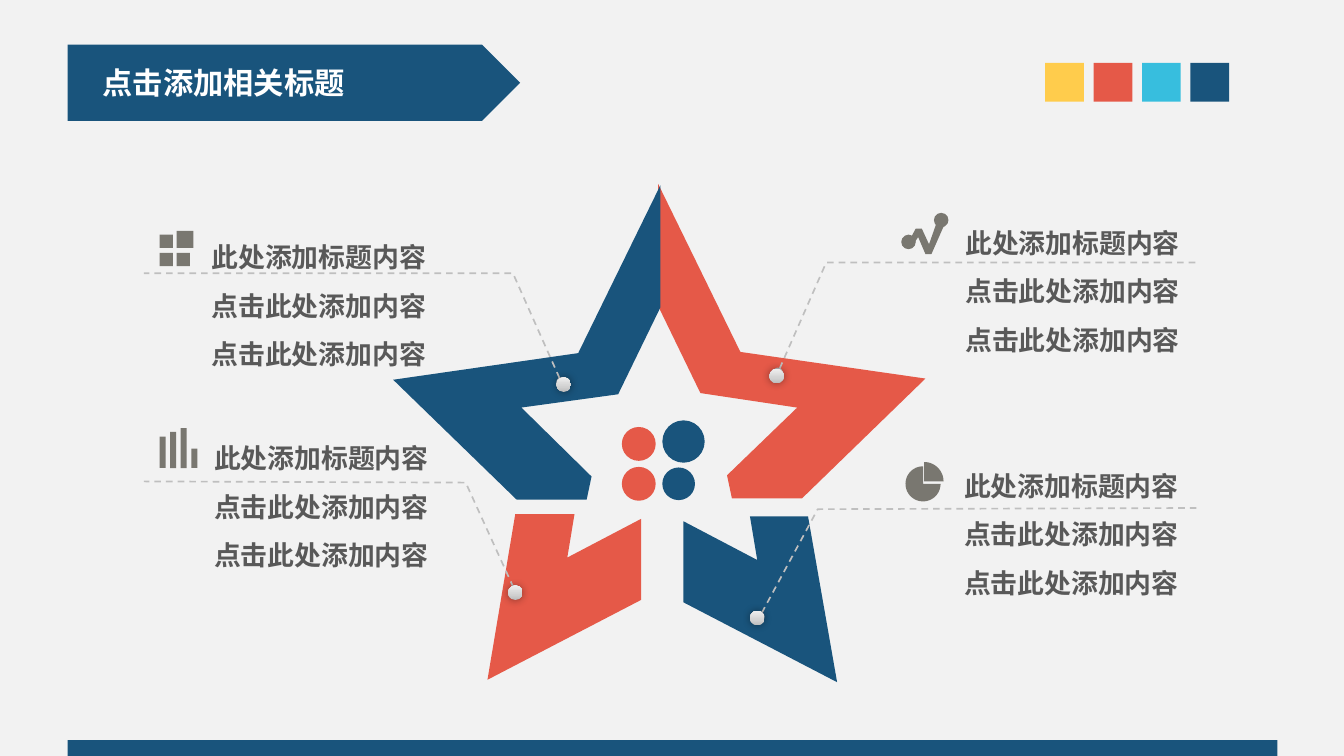
from math import cos, radians, sin

from lxml import etree
from pptx import Presentation
from pptx.dml.color import RGBColor
from pptx.enum.dml import MSO_LINE
from pptx.enum.shapes import MSO_SHAPE
from pptx.enum.text import MSO_AUTO_SIZE, PP_ALIGN
from pptx.oxml.ns import qn
from pptx.util import Cm, Pt

RECTANGLE = MSO_SHAPE.RECTANGLE
OVAL = MSO_SHAPE.OVAL
BANNER = MSO_SHAPE.PENTAGON
DASH = MSO_LINE.DASH
GROW = MSO_AUTO_SIZE.SHAPE_TO_FIT_TEXT
JUSTIFY = PP_ALIGN.JUSTIFY

COLORS = {
    "paper": "F2F2F2", "navy": "19547C", "red": "E55948", "yellow": "FFCC4C",
    "cyan": "37BEDE", "icon": "797770", "text": "595959", "leader": "BFBFBF",
    "white": "FFFFFF", "black": "000000",
}
PIN_STOPS = {0: "BDBDBD", 35: "D1D1D1", 100: "EEEEEE"}
FONT = "Noto Sans CJK SC"


def length(inches):
    return Cm(inches * 2.54)


def color(name):
    return RGBColor.from_string(COLORS[name])


def apply(target, values):
    for name, value in values.items():
        setattr(target, name, value)


def add_xml(parent, tag, **attributes):
    return etree.SubElement(parent, qn(tag), attributes)


class StarPage:
    def __init__(self, deck):
        self.page = deck.slides.add_slide(deck.slide_layouts[6])
        self.shapes = self.page.shapes
        background = self.page.background.fill
        background.solid()
        background.fore_color.rgb = color("paper")

    def paint(self, shape, fill):
        shape.shadow.inherit = False
        shape.fill.solid()
        shape.fill.fore_color.rgb = color(fill)
        shape.line.fill.background()
        return shape

    def preset(self, kind, left, top, width, height, fill):
        box = map(length, (left, top, width, height))
        return self.paint(self.shapes.add_shape(kind, *box), fill)

    def disc(self, x, y, size, fill):
        return self.preset(OVAL, x - size / 2, y - size / 2, size, size, fill)

    def outline(self, points, close=True):
        start, *rest = [(length(x), length(y)) for x, y in points]
        builder = self.shapes.build_freeform(*start)
        builder.add_line_segments(rest, close=close)
        return builder.convert_to_shape()

    def polygon(self, points, fill):
        return self.paint(self.outline(points), fill)

    def wedge(self, x, y, radius, first, last, fill):
        angles = [radians(angle) for angle in range(first, last + 1, 6)]
        arc = [(x + radius * cos(a), y + radius * sin(a)) for a in angles]
        return self.polygon([(x, y), *arc], fill)

    def group(self, members):
        self.shapes.add_group_shape(members)

    def leader(self, points):
        shape = self.outline(points, close=False)
        shape.shadow.inherit = False
        shape.fill.background()
        shape.line.color.rgb = color("leader")
        apply(shape.line, {"width": Pt(1), "dash_style": DASH})
        add_xml(shape.line._ln, "a:headEnd", type="oval")

    def pin(self, x, y):
        shape = self.disc(x, y, 0.12, "white")
        shape.fill.gradient()
        shape.fill.gradient_angle = 90
        properties = shape._element.spPr
        stops = properties.find(".//" + qn("a:gsLst"))
        stops.clear()
        for position, value in PIN_STOPS.items():
            stop = add_xml(stops, "a:gs", pos=str(position * 1000))
            add_xml(stop, "a:srgbClr", val=value)
        effects = properties.find(qn("a:effectLst"))
        shadow = add_xml(effects, "a:outerShdw", blurRad=str(Pt(5)), dist="0",
                         dir="0", algn="ctr", rotWithShape="0")
        tint = add_xml(shadow, "a:srgbClr", val=COLORS["black"])
        add_xml(tint, "a:alpha", val="40000")

    def text(self, left, top, width, height, lines, size, fill, frame, para_format):
        box = self.shapes.add_textbox(*map(length, (left, top, width, height)))
        apply(box.text_frame, {"auto_size": GROW, **frame})
        for index, line in enumerate(lines):
            para = box.text_frame.add_paragraph() if index else box.text_frame.paragraphs[0]
            apply(para, para_format)
            span = para.add_run()
            span.text = line
            apply(span.font, {"name": FONT, "size": Pt(size), "bold": True})
            span.font.color.rgb = color(fill)
            add_xml(span.font._element, "a:ea", typeface=FONT)


SWATCHES = ["yellow", "red", "cyan", "navy"]
STAR = [
    ("navy", [(5.65, 4.31), (5.65, 4.98), (6.92, 5.64), (6.68, 4.27),
              (6.2, 4.27), (6.26, 4.63)]),
    ("red", [(5.3, 4.29), (4.69, 4.61), (4.75, 4.25), (4.26, 4.25),
             (4.03, 5.62), (5.3, 4.96)]),
    ("red", [(6.12, 2.91), (5.44, 1.52), (5.44, 2.53), (5.79, 3.25), (6.59, 3.37),
             (6.01, 3.93), (6.05, 4.12), (6.63, 4.12), (7.65, 3.13)]),
    ("navy", [(4.78, 2.92), (3.25, 3.14), (4.27, 4.13), (4.85, 4.13), (4.89, 3.94),
              (4.31, 3.37), (5.11, 3.26), (5.46, 2.54), (5.46, 1.53)]),
]
CENTER_DISCS = [
    (5.28, 3.67, 0.28, "red"), (5.65, 3.65, 0.35, "navy"),
    (5.28, 4, 0.28, "red"), (5.61, 4, 0.27, "navy"),
]
CALLOUTS = [
    ((1.62, 1.79, 2.8), [(4.64, 3.16), (4.24, 2.26), (1.19, 2.26)], (4.66, 3.18)),
    ((7.85, 1.67, 2.51), [(6.43, 3.08), (6.83, 2.17), (9.92, 2.17)], (6.42, 3.11)),
    ((7.84, 3.68, 2.08), [(6.28, 5.1), (6.76, 4.21), (9.92, 4.2)], (6.26, 5.11)),
    ((1.64, 3.45, 2.79), [(4.26, 4.89), (3.85, 3.99), (1.19, 3.98)], (4.26, 4.9)),
]
CALLOUT_LINES = ["此处添加标题内容", "点击此处添加内容", "点击此处添加内容"]
CALLOUT_FRAME = {
    "word_wrap": True, "margin_left": length(0.13), "margin_right": length(0.13),
    "margin_top": length(0.07), "margin_bottom": length(0.07),
}
CALLOUT_PARA = {"alignment": JUSTIFY, "line_spacing": 1.5}
TILES = [(1.32, 1.94, 0.11), (1.46, 1.91, 0.14), (1.32, 2.09, 0.11), (1.46, 2.09, 0.11)]
BAR_HEIGHTS = [0.26, 0.3, 0.33, 0.16]
BAR_BASE = 3.87
TREND = [(7.5, 2.02), (7.57, 1.89), (7.62, 1.89), (7.68, 2.02), (7.75, 1.82),
         (7.81, 1.85), (7.7, 2.1), (7.65, 2.1), (7.59, 1.96), (7.55, 2.02)]


def draw_icons(star):
    star.group([star.preset(RECTANGLE, x, y, size, size, "icon") for x, y, size in TILES])
    star.group([
        star.preset(RECTANGLE, 1.32 + 0.087 * index, BAR_BASE - height, 0.05, height, "icon")
        for index, height in enumerate(BAR_HEIGHTS)
    ])
    star.group([
        star.polygon(TREND, "icon"),
        star.disc(7.51, 2, 0.12, "icon"),
        star.disc(7.78, 1.82, 0.12, "icon"),
    ])
    star.group([
        star.wedge(7.63, 4, 0.145, 0, 270, "icon"),
        star.wedge(7.64, 3.98, 0.16, 270, 360, "icon"),
    ])


def main():
    deck = Presentation()
    apply(deck, {"slide_width": length(11.11), "slide_height": length(6.25)})
    star = StarPage(deck)
    star.preset(BANNER, 0.56, 0.37, 3.74, 0.63, "navy")
    star.text(0.75, 0.48, 2.2, 0.4, ["点击添加相关标题"], 18, "white", {"word_wrap": False}, {})
    star.preset(RECTANGLE, 0.56, 6.12, 10, 0.13, "navy")
    for index, fill in enumerate(SWATCHES):
        star.preset(RECTANGLE, 8.64 + 0.4 * index, 0.52, 0.32, 0.32, fill)
    for fill, points in STAR:
        star.polygon(points, fill)
    for disc in CENTER_DISCS:
        star.disc(*disc)
    draw_icons(star)
    for place, points, pin in CALLOUTS:
        star.text(*place, 1.33, CALLOUT_LINES, 16, "text", CALLOUT_FRAME, CALLOUT_PARA)
        star.leader(points)
        star.pin(*pin)
    deck.save("out.pptx")


if __name__ == "__main__":
    main()
